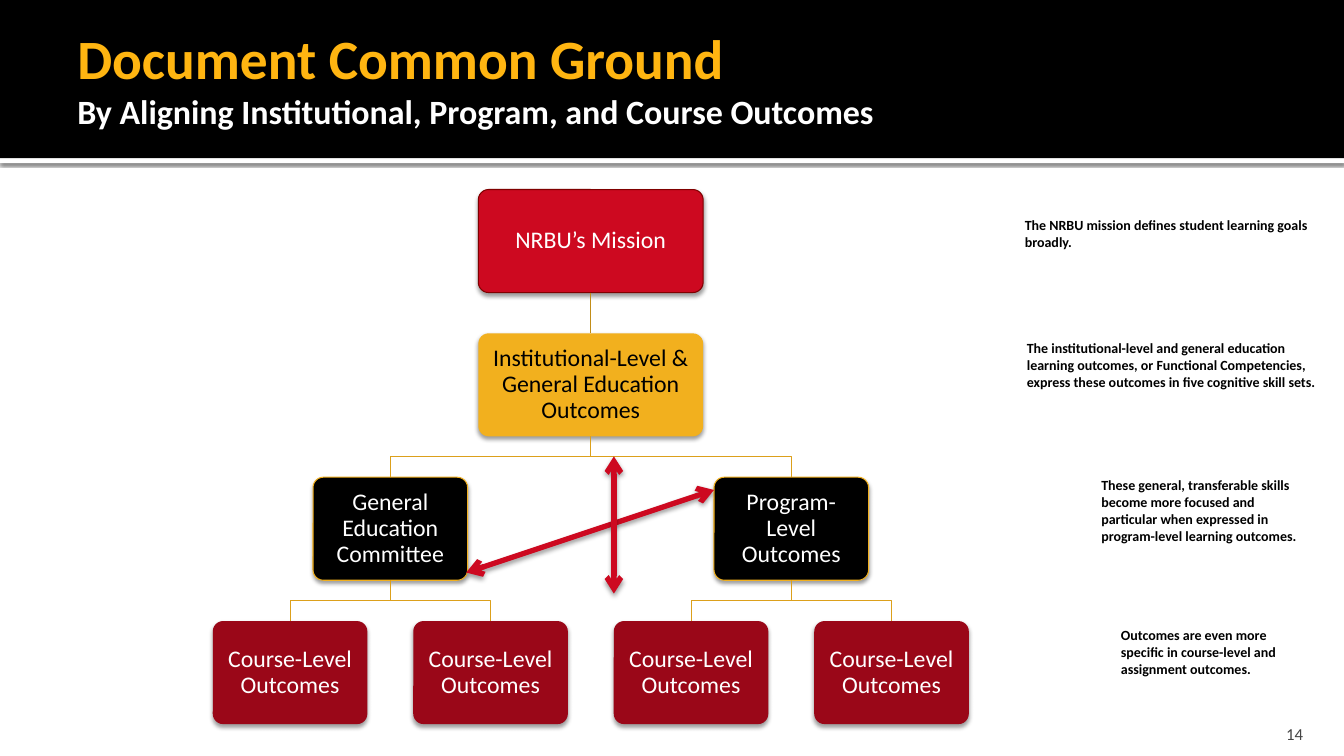
import pptx
import pptx.util
import pptx.dml.color
import pptx.enum.shapes
import pptx.enum.text
import pptx.oxml
import pptx.oxml.ns
import lxml.etree

Pt = pptx.util.Pt
RGB = pptx.dml.color.RGBColor.from_string
Kind = pptx.enum.shapes.MSO_SHAPE
Wire = pptx.enum.shapes.MSO_CONNECTOR
Align = pptx.enum.text.PP_ALIGN
Anchor = pptx.enum.text.MSO_ANCHOR
qn = pptx.oxml.ns.qn

hues = {
    "white": "FFFFFF", "black": "000000", "title": "FFB511", "page": "454545",
    "red": "CD0920", "edge": "800000", "gold": "F2B01E", "dark": "9A0718",
    "stem": "C28D18", "link": "DCA01B",
}


def style(run, size, hue, bold=False):
    run.font.name = "Calibri"
    run.font.size = Pt(size)
    run.font.bold = bold
    run.font.color.rgb = RGB(hues[hue])


def shade(shape, alpha, blur, drop):
    old = shape.element.spPr.find(qn("a:effectLst"))
    if old is not None:
        shape.element.spPr.remove(old)
    shape.element.spPr.append(pptx.oxml.parse_xml(
        f'<a:effectLst {pptx.oxml.ns.nsdecls("a")}>'
        f'<a:outerShdw blurRad="{Pt(blur)}" dist="{Pt(drop)}" dir="5400000" rotWithShape="0">'
        f'<a:srgbClr val="000000"><a:alpha val="{alpha * 1000}"/></a:srgbClr>'
        '</a:outerShdw></a:effectLst>'))


deck = pptx.Presentation()
deck.slide_width, deck.slide_height = Pt(960), Pt(540)
slide = deck.slides.add_slide(deck.slide_layouts[5])
shapes = slide.shapes

for top, tall, hue in [(113, 3.6, "white"), (0, 113, "black")]:
    bar = shapes.add_shape(Kind.RECTANGLE, 0, Pt(top), Pt(960), Pt(tall))
    bar.fill.solid()
    bar.fill.fore_color.rgb = RGB(hues[hue])
    bar.line.fill.background()
    bar.shadow.inherit = False
    if hue == "white":
        shade(bar, 60, 2.5, 0.8)

title = shapes.title
shapes.element.append(title.element)
title.left, title.top, title.width, title.height = Pt(48), Pt(12), Pt(864), Pt(111.6)
frame = title.text_frame
frame.text = "Document Common Ground\vBy Aligning Institutional, Program, and Course Outcomes"
frame.word_wrap = True
frame.auto_size = pptx.enum.text.MSO_AUTO_SIZE.NONE
frame.vertical_anchor = Anchor.MIDDLE
frame.margin_left, frame.margin_right = Pt(7.2), Pt(3.6)
frame.margin_top, frame.margin_bottom = Pt(3.6), Pt(28.4)
frame.paragraphs[0].alignment = Align.LEFT
head, sub = frame.paragraphs[0].runs
style(head, 39.6, "title", True)
style(sub, 24.3, "white", True)

mid, gap, first, step, tall = 422, 143.2, 135.4, 102.75, 73.6
wide, slim = 160.6, 110.4
course = "Course-Level Outcomes"
boxes = [
    ("NRBU’s Mission", 0, 0, wide, "red", "white", "edge", None),
    ("Institutional-Level & General Education Outcomes", 0, 1, wide, "gold", "black", None, 0),
    ("General Education Committee", -1, 2, slim, "black", "white", "gold", 1),
    ("Program-Level Outcomes", 1, 2, slim, "black", "white", "gold", 1),
]
for col, parent in [(-1.5, 2), (-0.5, 2), (0.5, 3), (1.5, 3)]:
    boxes.append((course, col, 3, slim, "dark", "white", None, parent))

for text, col, row, width, fill, ink, edge, parent in boxes:
    x, y = mid + col * gap, first + row * step
    if parent is not None:
        px = mid + boxes[parent][1] * gap
        low = y - step + tall
        bend = (low + y) / 2
        if px == x:
            link = shapes.add_connector(Wire.STRAIGHT, Pt(x), Pt(low), Pt(x), Pt(y))
            lxml.etree.SubElement(link.element.spPr, qn("a:effectLst"))
            link.line.color.rgb = RGB(hues["stem"])
        else:
            path = shapes.build_freeform(Pt(px), Pt(low))
            path.add_line_segments(
                [(Pt(px), Pt(bend)), (Pt(x), Pt(bend)), (Pt(x), Pt(y))], close=False)
            link = path.convert_to_shape()
            link.fill.background()
            link.shadow.inherit = False
            link.line.color.rgb = RGB(hues["link"])
        link.line.width = Pt(0.5)

    box = shapes.add_shape(
        Kind.ROUNDED_RECTANGLE, Pt(x - width / 2), Pt(y), Pt(width), Pt(tall))
    box.adjustments[0] = 0.1
    box.fill.solid()
    box.fill.fore_color.rgb = RGB(hues[fill])
    if edge:
        box.line.color.rgb = RGB(hues[edge])
        box.line.width = Pt(0.75)
    else:
        box.line.fill.background()
    box.shadow.inherit = False
    shade(box, 38, 3.1, 2)
    frame = box.text_frame
    frame.text = text
    frame.word_wrap = True
    frame.vertical_anchor = Anchor.MIDDLE
    frame.margin_left = frame.margin_right = Pt(7)
    frame.margin_top = frame.margin_bottom = Pt(7)
    para = frame.paragraphs[0]
    para.alignment = Align.CENTER
    para.line_spacing = 0.9
    style(para.runs[0], 17, ink)

notes = [
    (725, 151.2, 224, 34, "The NRBU mission defines student learning goals broadly."),
    (726.4, 239, 223.2, 67, "The institutional-level and general education learning outcomes, "
     "or Functional Competencies, express these outcomes in five cognitive skill sets."),
    (779.6, 337, 164, 72, "These general, transferable skills become more focused and "
     "particular when expressed in program-level learning outcomes."),
    (793.6, 444.2, 148.4, 70, "Outcomes are even more specific in course-level and "
     "assignment outcomes."),
]
for x, y, width, high, text in notes:
    note = shapes.add_textbox(Pt(x), Pt(y), Pt(width), Pt(high))
    note.text_frame.text = text
    note.text_frame.word_wrap = True
    style(note.text_frame.paragraphs[0].runs[0], 10, "black", True)

for ends in [(510, 350, 333, 409), (438.5, 326, 438.5, 424)]:
    arrow = shapes.add_connector(Wire.STRAIGHT, *[Pt(end) for end in ends])
    arrow.line.color.rgb = RGB(hues["red"])
    arrow.line.width = Pt(3.8)
    for tip in ("a:headEnd", "a:tailEnd"):
        lxml.etree.SubElement(arrow.line._get_or_add_ln(), qn(tip), type="arrow")
    shade(arrow, 38, 3.5, 2)

page = shapes.add_textbox(Pt(861), Pt(510), Pt(77), Pt(21.6))
frame = page.text_frame
frame.text = "14"
frame.word_wrap = True
frame.vertical_anchor = Anchor.BOTTOM
frame.margin_bottom = 0
frame.paragraphs[0].alignment = Align.RIGHT
style(frame.paragraphs[0].runs[0], 12, "page")

deck.save("out.pptx")
